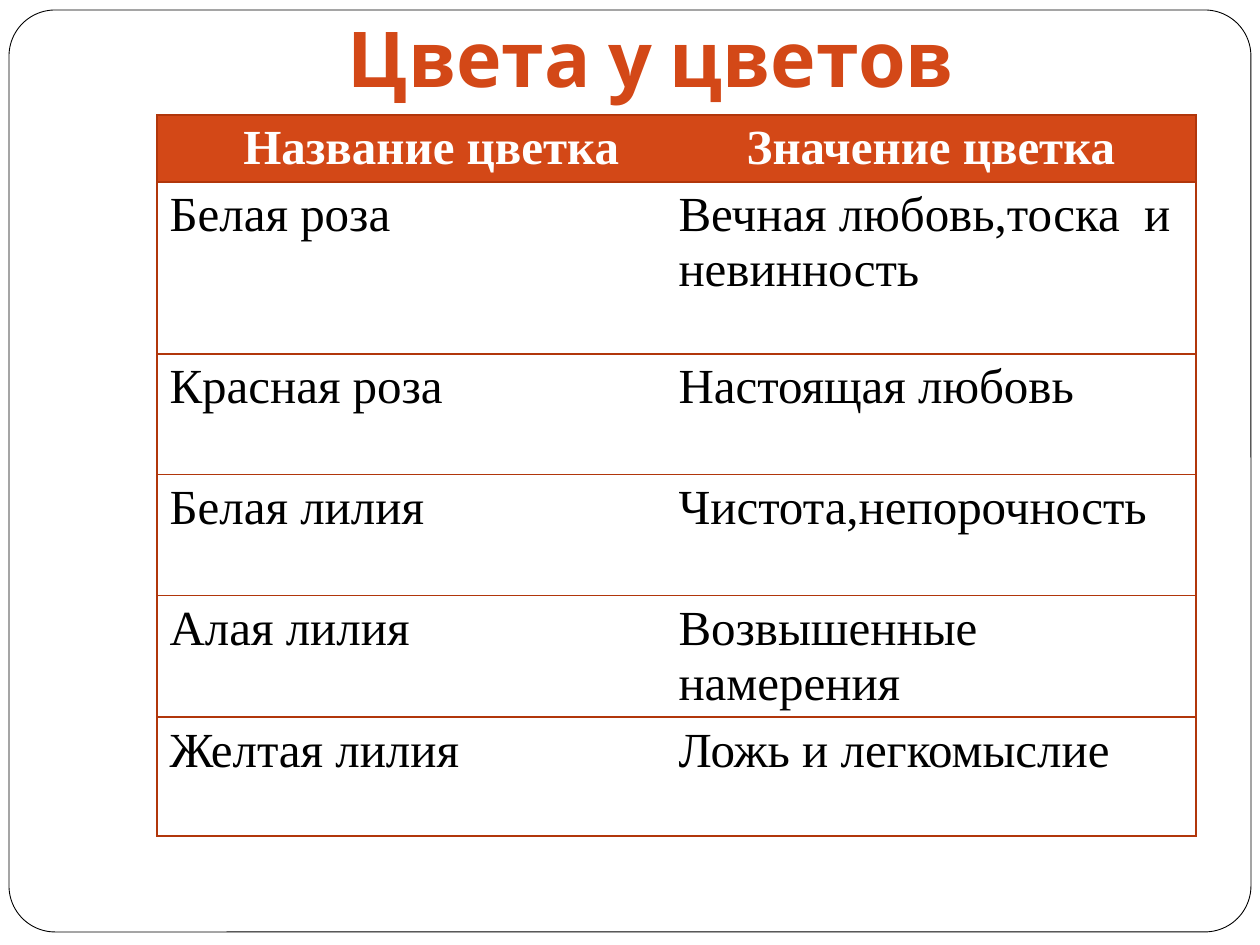
from dataclasses import dataclass

from lxml import etree
from pptx import Presentation
from pptx import util as u
from pptx.dml.color import RGBColor
from pptx.enum import shapes, text
from pptx.oxml.ns import qn

SCALE = 914400 / 126
ACCENT, EDGE, WHITE, BLACK = "D34817", "B1360B", "FFFFFF", "000000"
SERIF = "Times New Roman"


@dataclass
class Row:
    flower: str
    sense: str
    high: int


ROWS = [
    Row("Название цветка", "Значение цветка", 67),
    Row("Белая роза", "Вечная любовь,тоска  и невинность", 172),
    Row("Красная роза", "Настоящая любовь", 121),
    Row("Белая лилия", "Чистота,непорочность", 121),
    Row("Алая лилия", "Возвышенные намерения", 121),
    Row("Желтая лилия", "Ложь и легкомыслие", 119),
]
COLS = [509, 530]


def px(n: int) -> u.Emu:
    return u.Emu(round(n * SCALE))


def color(code: str) -> RGBColor:
    return RGBColor.from_string(code)


def apply(item, values: dict) -> None:
    for name, value in values.items():
        setattr(item, name, value)


def write(frame, words: str, align, tint: str, **values) -> None:
    frame.text = words
    para = frame.paragraphs[0]
    para.alignment = align
    font = para.runs[0].font
    apply(font, values)
    font.color.rgb = color(tint)


def border(cell, sides: dict) -> None:
    """Draw each side in its colour, or hide it when the colour is None."""
    props = cell._tc.get_or_add_tcPr()
    for spot, (side, tint) in enumerate(sides.items()):
        line = etree.Element(qn("a:ln" + side), w=str(u.Pt(0.75)))
        props.insert(spot, line)
        if tint:
            fill = etree.SubElement(line, qn("a:solidFill"))
            etree.SubElement(fill, qn("a:srgbClr"), val=tint)
        else:
            etree.SubElement(line, qn("a:noFill"))


def draw_frame(slide) -> None:
    frame = slide.shapes.add_shape(
        shapes.MSO_SHAPE.ROUNDED_RECTANGLE, px(9), px(10), px(1242), px(922))
    frame.adjustments[0] = 0.05
    frame.shadow.inherit = False
    frame.fill.solid()
    frame.fill.fore_color.rgb = color(WHITE)
    frame.line.color.rgb = color(BLACK)
    frame.line.width = u.Pt(0.5)
    # Send behind the title
    slide.shapes._spTree.insert(2, frame._element)


def draw_title(slide) -> None:
    title = slide.shapes.title
    apply(title, dict(left=px(116), top=px(-42), width=px(1071), height=px(158)))
    frame = title.text_frame
    apply(frame, dict(auto_size=text.MSO_AUTO_SIZE.NONE, word_wrap=True,
                      vertical_anchor=text.MSO_ANCHOR.BOTTOM,
                      margin_bottom=px(13)))
    write(frame, "Цвета у цветов", text.PP_ALIGN.CENTER, ACCENT,
          name="Cabin", size=u.Pt(44), bold=True)


def draw_table(slide) -> None:
    high = sum(row.high for row in ROWS)
    table = slide.shapes.add_table(
        len(ROWS), len(COLS), px(157), px(115), px(sum(COLS)), px(high)).table
    table.horz_banding = False
    for col, wide in zip(table.columns, COLS):
        col.width = px(wide)
    for r, row in enumerate(ROWS):
        table.rows[r].height = px(row.high)
        head = r == 0
        for c, words in enumerate((row.flower, row.sense)):
            cell = table.cell(r, c)
            cell.fill.solid()
            cell.fill.fore_color.rgb = color(ACCENT if head else WHITE)
            write(cell.text_frame, words,
                  text.PP_ALIGN.CENTER if head else text.PP_ALIGN.LEFT,
                  WHITE if head else BLACK,
                  name=SERIF, size=u.Pt(28), bold=head)
            # Outer edges and row rules only, no rule between the columns
            border(cell, dict(L=None if c else EDGE, R=EDGE if c else None,
                              T=EDGE, B=EDGE))
    # The first heading sits right of centre
    table.cell(0, 0).margin_left = px(52)


def main() -> None:
    deck = Presentation()
    apply(deck, dict(slide_width=px(1260), slide_height=px(945)))
    slide = deck.slides.add_slide(deck.slide_layouts[5])
    draw_frame(slide)
    draw_title(slide)
    draw_table(slide)
    deck.save("out.pptx")


if __name__ == "__main__":
    main()
